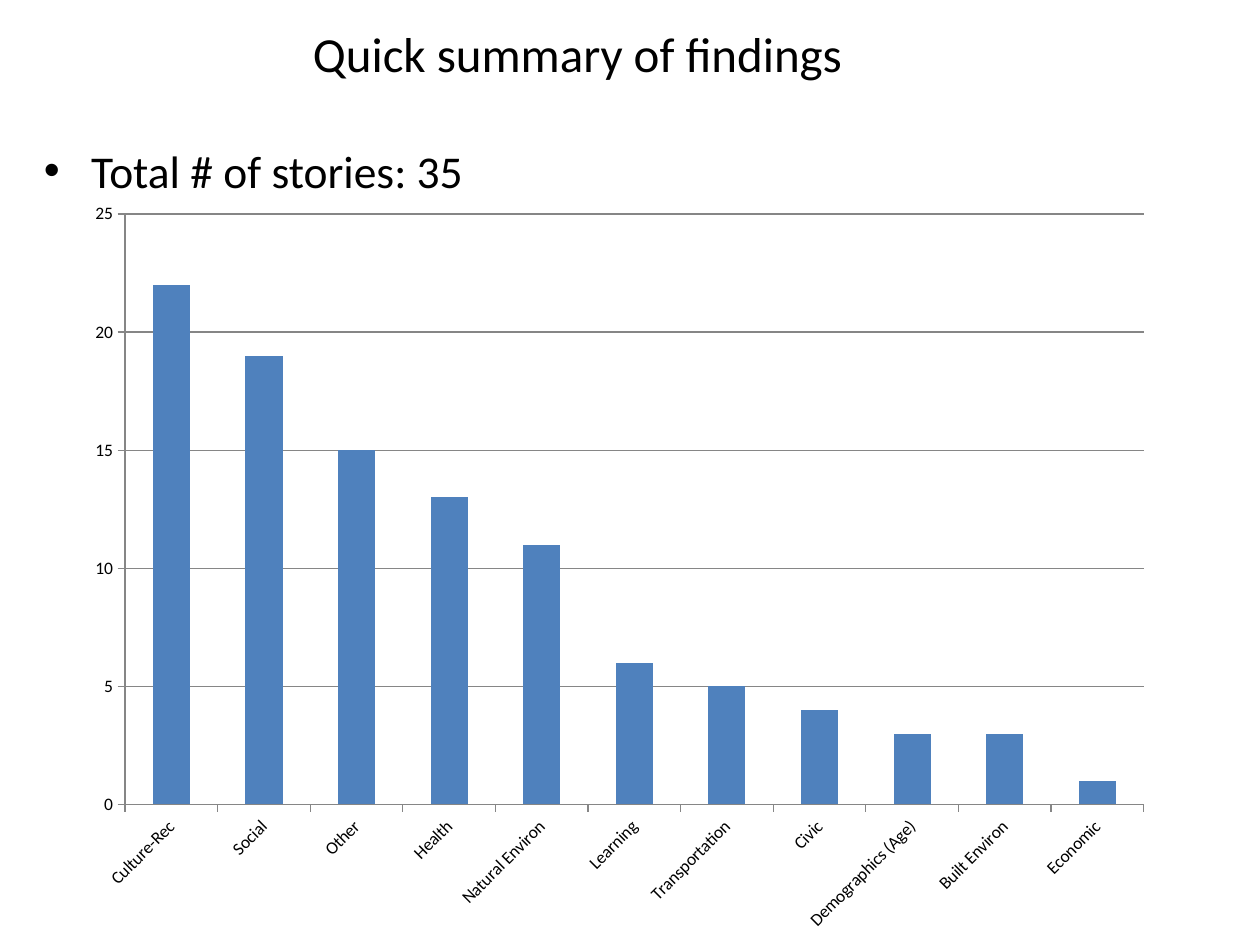
from lxml import etree
from pptx import Presentation
from pptx.chart.data import CategoryChartData
from pptx.dml.color import RGBColor
from pptx.enum.chart import XL_CHART_TYPE, XL_TICK_MARK
from pptx.enum.text import MSO_ANCHOR, PP_ALIGN
from pptx.oxml.ns import qn
from pptx.util import Emu, Pt

PX = 9525
FONT = "Calibri"
BLACK, GREY, BLUE = "000000", "868686", "4F81BD"

STORIES_BY_TOPIC = {
    "Culture-Rec": 22,
    "Social": 19,
    "Other": 15,
    "Health": 13,
    "Natural Environ": 11,
    "Learning": 6,
    "Transportation": 5,
    "Civic": 4,
    "Demographics (Age)": 3,
    "Built Environ": 3,
    "Economic": 1,
}


def px(length):
    return Emu(length * PX)


def color(hex_value):
    return RGBColor.from_string(hex_value)


def style_font(font, size):
    font.name = FONT
    font.size = Pt(size)
    font.color.rgb = color(BLACK)


def add_text(slide, box, text, size, anchor=MSO_ANCHOR.TOP):
    """Add a one-paragraph text box and return its paragraph."""
    frame = slide.shapes.add_textbox(*map(px, box)).text_frame
    frame.word_wrap = True
    frame.vertical_anchor = anchor
    paragraph = frame.paragraphs[0]
    paragraph.text = text
    style_font(paragraph.font, size)
    return paragraph


def add_title(slide, box, text):
    title = add_text(slide, box, text, 28, MSO_ANCHOR.MIDDLE)
    title.alignment = PP_ALIGN.CENTER


def add_bullet(slide, box, text, indent=36):
    bullet = add_text(slide, box, text, 26)
    properties = bullet._p.get_or_add_pPr()
    properties.set("marL", str(px(indent)))
    properties.set("indent", str(px(-indent)))
    etree.SubElement(properties, qn("a:buFont")).set("typeface", "Arial")
    etree.SubElement(properties, qn("a:buChar")).set("char", "•")
    # The schema wants the bullet ahead of the default run properties.
    properties.append(properties.find(qn("a:defRPr")))


def add_topic_chart(slide, box, topics):
    data = CategoryChartData()
    data.categories = list(topics)
    data.add_series("Series 1", list(topics.values()))
    chart = slide.shapes.add_chart(
        XL_CHART_TYPE.COLUMN_CLUSTERED, *map(px, box), data).chart
    chart.has_legend = False
    chart.has_title = False
    style_font(chart.font, 10)

    plot = chart.plots[0]
    plot.gap_width = 150
    plot.vary_by_categories = False
    bars = plot.series[0].format.fill
    bars.solid()
    bars.fore_color.rgb = color(BLUE)

    topic_axis, count_axis = chart.category_axis, chart.value_axis
    count_axis.minimum_scale = 0
    count_axis.maximum_scale = 25
    count_axis.major_unit = 5
    count_axis.has_major_gridlines = True
    for axis in (topic_axis, count_axis):
        axis.major_tick_mark = XL_TICK_MARK.OUTSIDE
        axis.minor_tick_mark = XL_TICK_MARK.NONE
        style_font(axis.tick_labels.font, 10)
    for part in (topic_axis, count_axis, count_axis.major_gridlines):
        part.format.line.color.rgb = color(GREY)
        part.format.line.width = Pt(0.75)
    label_body = topic_axis._element.find(qn("c:txPr")).find(qn("a:bodyPr"))
    label_body.set("rot", str(-45 * 60000))
    label_body.set("vert", "horz")


def main():
    deck = Presentation()
    deck.slide_width, deck.slide_height = px(960), px(720)
    slide = deck.slides.add_slide(deck.slide_layouts[6])
    add_title(slide, (48, -16, 784, 112), "Quick summary of findings")
    add_bullet(slide, (24, 104, 864, 463), "Total # of stories: 35")
    add_topic_chart(slide, (56, 144, 832, 576), STORIES_BY_TOPIC)
    deck.save("out.pptx")


if __name__ == "__main__":
    main()
